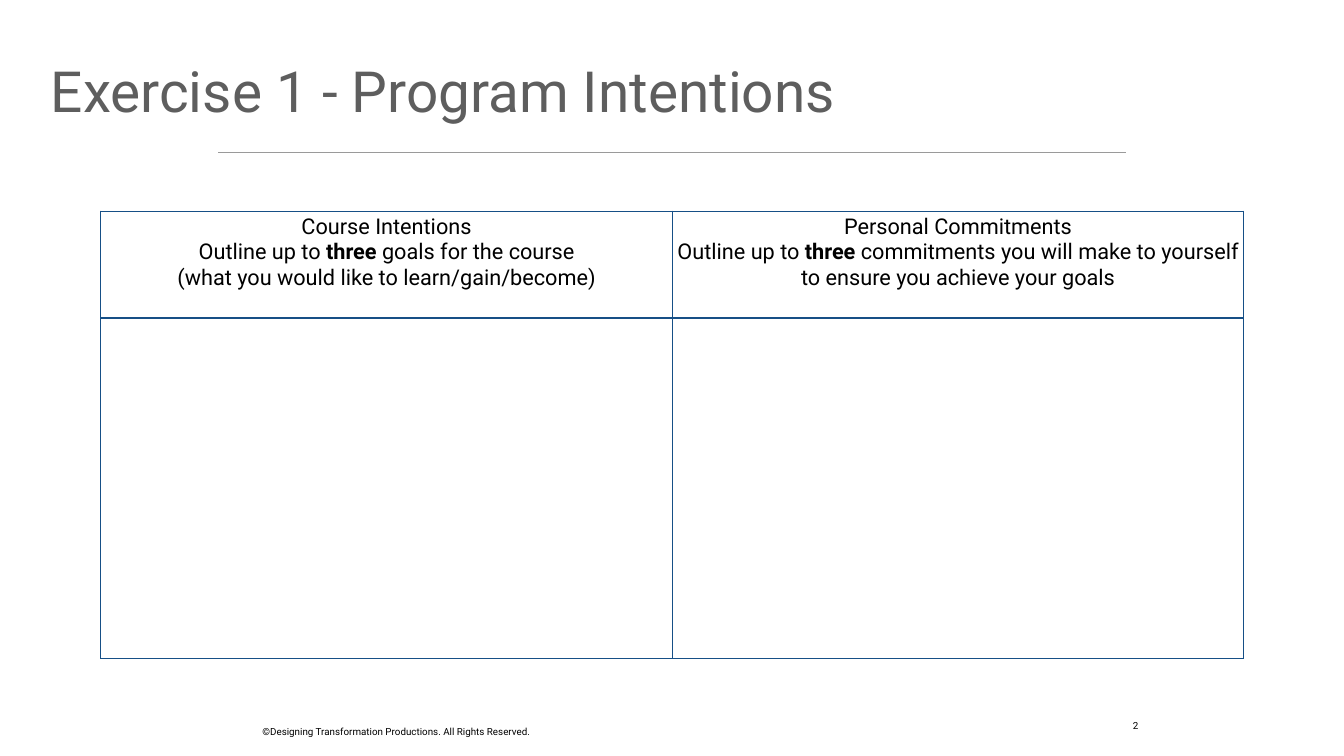
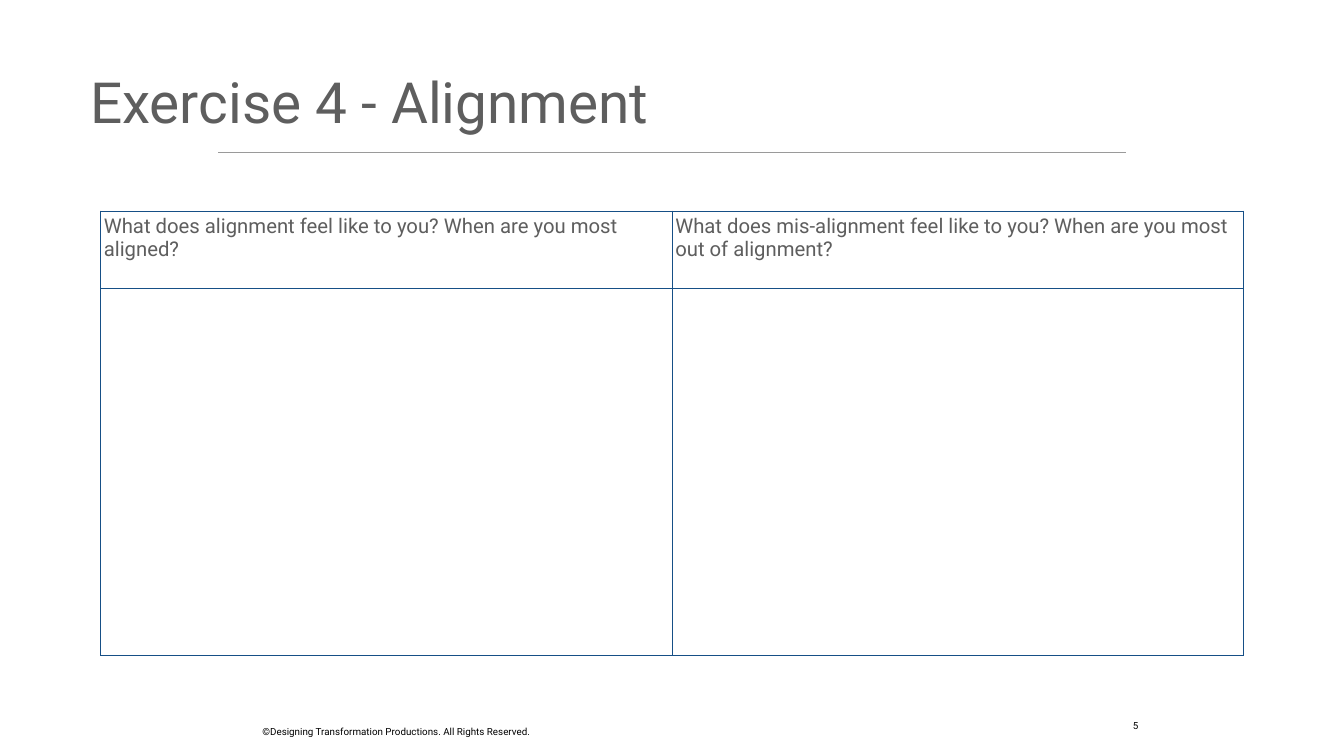
from lxml import etree
from pptx import Presentation
from pptx.dml.color import RGBColor
from pptx.enum.shapes import MSO_CONNECTOR
from pptx.enum.text import MSO_ANCHOR, MSO_AUTO_SIZE, PP_ALIGN
from pptx.oxml.ns import qn
from pptx.util import Pt

EMU_PER_PX = 9144  # 100 px to the inch
BLANK_LAYOUT = 6
STRAIGHT = MSO_CONNECTOR.STRAIGHT
BOTTOM = MSO_ANCHOR.BOTTOM
LEFT, CENTER = PP_ALIGN.LEFT, PP_ALIGN.CENTER
FIT_SHAPE, NO_FIT = MSO_AUTO_SIZE.SHAPE_TO_FIT_TEXT, MSO_AUTO_SIZE.NONE

FONT = "Roboto"
BLACK = RGBColor(0x00, 0x00, 0x00)
WHITE = RGBColor(0xFF, 0xFF, 0xFF)
GREY = RGBColor(0x5E, 0x5E, 0x5E)
RULE_GREY = RGBColor(0x9A, 0x9A, 0x9A)
BORDER_BLUE = RGBColor(0x16, 0x4F, 0x86)

COPYRIGHT = "©Designing Transformation Productions. All Rights Reserved."
TABLE_LEFT, TABLE_TOP, COLUMN_WIDTH = 200, 419, 1134

# Each heading is a list of paragraphs; each paragraph a list of (text, bold).
INTENTION_HEADINGS = [
    [
        [("Course Intentions", False)],
        [("Outline up to ", False), ("three ", True), ("goals for the course", False)],
        [("(what you would like to learn/gain/become)", False)],
    ],
    [
        [("Personal Commitments", False)],
        [("Outline up to ", False), ("three", True),
         (" commitments you will make to yourself to ensure you achieve your goals", False)],
    ],
]
ALIGNMENT_HEADINGS = [
    [[("What does alignment feel like to you? When are you most aligned?", False)]],
    [[("What does mis-alignment feel like to you? When are you most out of alignment?", False)]],
]


def px(length):
    return length * EMU_PER_PX


def set_margins(target, margin):
    target.margin_left = target.margin_right = px(margin)
    target.margin_top = target.margin_bottom = px(margin)


def style_paragraph(paragraph, size, color, align):
    paragraph.alignment = align
    paragraph.font.name = FONT
    paragraph.font.size = Pt(size)
    paragraph.font.color.rgb = color


def add_text(slide, box, text, size, color, align=LEFT, wrap=False):
    """Add one bottom-anchored line of text; unwrapped boxes fit their text."""
    frame = slide.shapes.add_textbox(*map(px, box)).text_frame
    frame.word_wrap = wrap
    frame.auto_size = NO_FIT if wrap else FIT_SHAPE
    frame.vertical_anchor = BOTTOM
    set_margins(frame, 8)
    frame.text = text
    style_paragraph(frame.paragraphs[0], size, color, align)


def add_title_rule(slide):
    rule = slide.shapes.add_connector(STRAIGHT, px(433), px(303), px(2234), px(303))
    rule.line.color.rgb = RULE_GREY
    rule.line.width = Pt(1)
    etree.SubElement(rule.element.spPr, qn("a:effectLst"))


def set_borders(cell, color, width):
    properties = cell._tc.get_or_add_tcPr()
    for index, side in enumerate(("lnL", "lnR", "lnT", "lnB")):
        border = etree.Element(qn(f"a:{side}"), w=str(Pt(width)))
        fill = etree.SubElement(border, qn("a:solidFill"))
        etree.SubElement(fill, qn("a:srgbClr"), val=str(color))
        properties.insert(index, border)


def fill_heading(cell, paragraphs, size, color, align):
    frame = cell.text_frame
    for index, runs in enumerate(paragraphs):
        paragraph = frame.add_paragraph() if index else frame.paragraphs[0]
        style_paragraph(paragraph, size, color, align)
        for text, bold in runs:
            run = paragraph.add_run()
            run.text = text
            if bold:
                run.font.bold = True


def add_worksheet(slide, headings, row_heights, size, color, align):
    """Add a table of headings above empty answer cells."""
    table = slide.shapes.add_table(
        len(row_heights), len(headings), px(TABLE_LEFT), px(TABLE_TOP),
        px(COLUMN_WIDTH * len(headings)), px(sum(row_heights))).table
    for column in table.columns:
        column.width = px(COLUMN_WIDTH)
    for row, height in zip(table.rows, row_heights):
        row.height = px(height)
    for cell in table.iter_cells():
        set_margins(cell, 6)
        cell.fill.solid()
        cell.fill.fore_color.rgb = WHITE
        set_borders(cell, BORDER_BLUE, 2)
    for index, heading in enumerate(headings):
        fill_heading(table.cell(0, index), heading, size, color, align)


def add_exercise(deck, title, title_left, title_top, number):
    """Add a slide with the shared rule, footer, title and page number."""
    slide = deck.slides.add_slide(deck.slide_layouts[BLANK_LAYOUT])
    add_title_rule(slide)
    add_text(slide, (495, 1429, 583, 42), COPYRIGHT, 14, BLACK, CENTER)
    add_text(slide, (title_left, title_top, 1824, 215), title, 81, GREY, wrap=True)
    add_text(slide, (2240, 1420, 41, 39), number, 14, BLACK)
    return slide


def main():
    deck = Presentation()
    deck.slide_width, deck.slide_height = px(2667), px(1500)

    intentions = add_exercise(deck, "Exercise 1 - Program Intentions", 93, 38, "2")
    add_worksheet(intentions, INTENTION_HEADINGS, (212, 675), 31, BLACK, CENTER)

    alignment = add_exercise(deck, "Exercise 4 - Alignment", 171, 60, "5")
    add_worksheet(alignment, ALIGNMENT_HEADINGS, (153, 729), 29, GREY, LEFT)

    deck.save("out.pptx")


if __name__ == "__main__":
    main()
